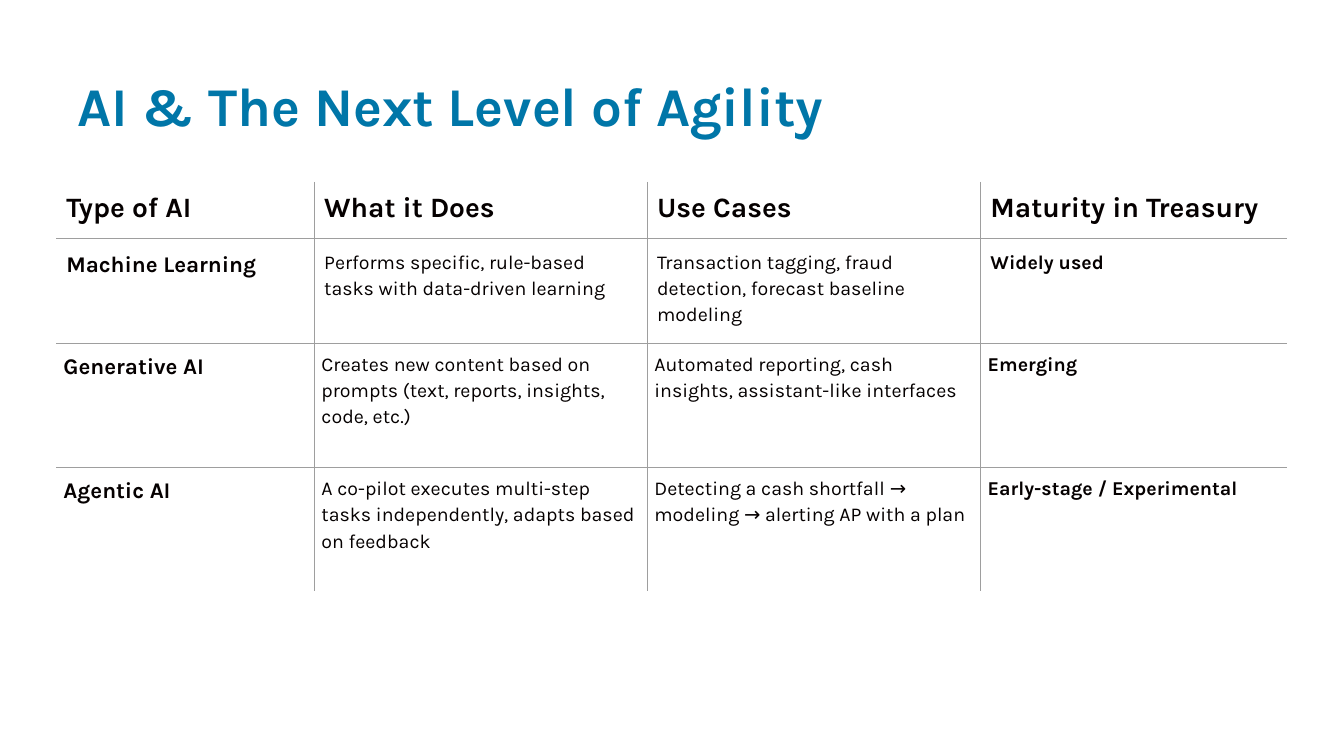
import pptx
import pptx.util
import pptx.dml.color
import pptx.enum.text
import pptx.oxml
import pptx.oxml.ns
from dataclasses import dataclass

Cm = pptx.util.Cm
Pt = pptx.util.Pt


@dataclass(frozen=True)
class Theme:
    font: str = "Karla"
    title_color: str = "0076A8"
    text_color: str = "050000"
    rule_color: str = "9E9E9E"
    title_size: float = 39
    header_size: float = 20
    type_size: float = 16
    body_size: float = 14
    line_spacing: float = 1.15


THEME = Theme()
COLUMN_WIDTHS = (6.5, 8.39, 8.4, 7.73)
ROW_HEIGHTS = (1.42, 2.64, 3.13, 3.13)
ROW_MARGINS = (0.25, 0.25, 0.18, 0.18)
RULE_WIDTHS = (0.75, 0.5, 0.5)
AI_TYPES = (
    ("Type of AI", "What it Does", "Use Cases", "Maturity in Treasury"),
    ("Machine Learning",
     "Performs specific, rule-based tasks with data-driven learning",
     "Transaction tagging, fraud detection, forecast baseline modeling",
     "Widely used"),
    ("Generative AI",
     "Creates new content based on prompts (text, reports, insights, code, etc.)",
     "Automated reporting, cash insights, assistant-like interfaces",
     "Emerging"),
    ("Agentic AI",
     "A co-pilot executes multi-step tasks independently, adapts based on feedback",
     "Detecting a cash shortfall → modeling → alerting AP with a plan",
     "Early-stage / Experimental"),
)


def style_text(paragraph, size, color, bold):
    for run in paragraph.runs:
        run.font.name = THEME.font
        run.font.size = Pt(size)
        run.font.bold = bold
        run.font.color.rgb = pptx.dml.color.RGBColor.from_string(color)


def add_title(slide, wording):
    title = slide.shapes.add_textbox(Cm(1.7), Cm(1.04), Cm(30.48), Cm(3.18))
    frame = title.text_frame
    frame.word_wrap = True
    frame.vertical_anchor = pptx.enum.text.MSO_ANCHOR.MIDDLE
    frame.text = wording
    style_text(frame.paragraphs[0], THEME.title_size, THEME.title_color, True)


def set_border(cell, side, width):
    properties = cell._tc.get_or_add_tcPr()
    line = pptx.oxml.parse_xml(
        f'<a:ln{side} {pptx.oxml.ns.nsdecls("a")} w="{int(Pt(width or 0))}"/>')
    if width:
        fill = pptx.oxml.parse_xml(
            f'<a:solidFill {pptx.oxml.ns.nsdecls("a")}>'
            f'<a:srgbClr val="{THEME.rule_color}"/></a:solidFill>')
    else:
        fill = pptx.oxml.parse_xml(f'<a:noFill {pptx.oxml.ns.nsdecls("a")}/>')
    line.append(fill)
    properties.append(line)


def rule_cell(cell, row, column):
    last_row, last_column = len(ROW_HEIGHTS) - 1, len(COLUMN_WIDTHS) - 1
    vertical = 0.75 if row < 2 else 0.5
    set_border(cell, "L", vertical if column > 0 else None)
    set_border(cell, "R", vertical if column < last_column else None)
    set_border(cell, "T", RULE_WIDTHS[row - 1] if row > 0 else None)
    set_border(cell, "B", RULE_WIDTHS[row] if row < last_row else None)
    cell.fill.background()


def fill_cell(cell, wording, row, column):
    margin = Cm(ROW_MARGINS[row])
    cell.margin_left = cell.margin_right = margin
    cell.margin_top = cell.margin_bottom = margin
    cell.text_frame.text = wording
    paragraph = cell.text_frame.paragraphs[0]
    if row == 0:
        size = THEME.header_size
    else:
        size = THEME.type_size if column == 0 else THEME.body_size
        paragraph.line_spacing = THEME.line_spacing
    bold = row == 0 or column in (0, len(COLUMN_WIDTHS) - 1)
    style_text(paragraph, size, THEME.text_color, bold)


def add_comparison(slide):
    comparison = slide.shapes.add_table(
        len(ROW_HEIGHTS), len(COLUMN_WIDTHS), Cm(1.42), Cm(4.58),
        Cm(sum(COLUMN_WIDTHS)), Cm(sum(ROW_HEIGHTS))).table
    comparison.first_row = False
    comparison.horz_banding = False
    for column, width in zip(comparison.columns, COLUMN_WIDTHS):
        column.width = Cm(width)
    for row, height in zip(comparison.rows, ROW_HEIGHTS):
        row.height = Cm(height)
    for row, wordings in enumerate(AI_TYPES):
        for column, wording in enumerate(wordings):
            cell = comparison.cell(row, column)
            fill_cell(cell, wording, row, column)
            rule_cell(cell, row, column)


def main():
    deck = pptx.Presentation()
    deck.slide_width, deck.slide_height = Cm(33.87), Cm(19.05)
    slide = deck.slides.add_slide(deck.slide_layouts[6])
    add_title(slide, "AI & The Next Level of Agility")
    add_comparison(slide)
    deck.save("out.pptx")


if __name__ == "__main__":
    main()
